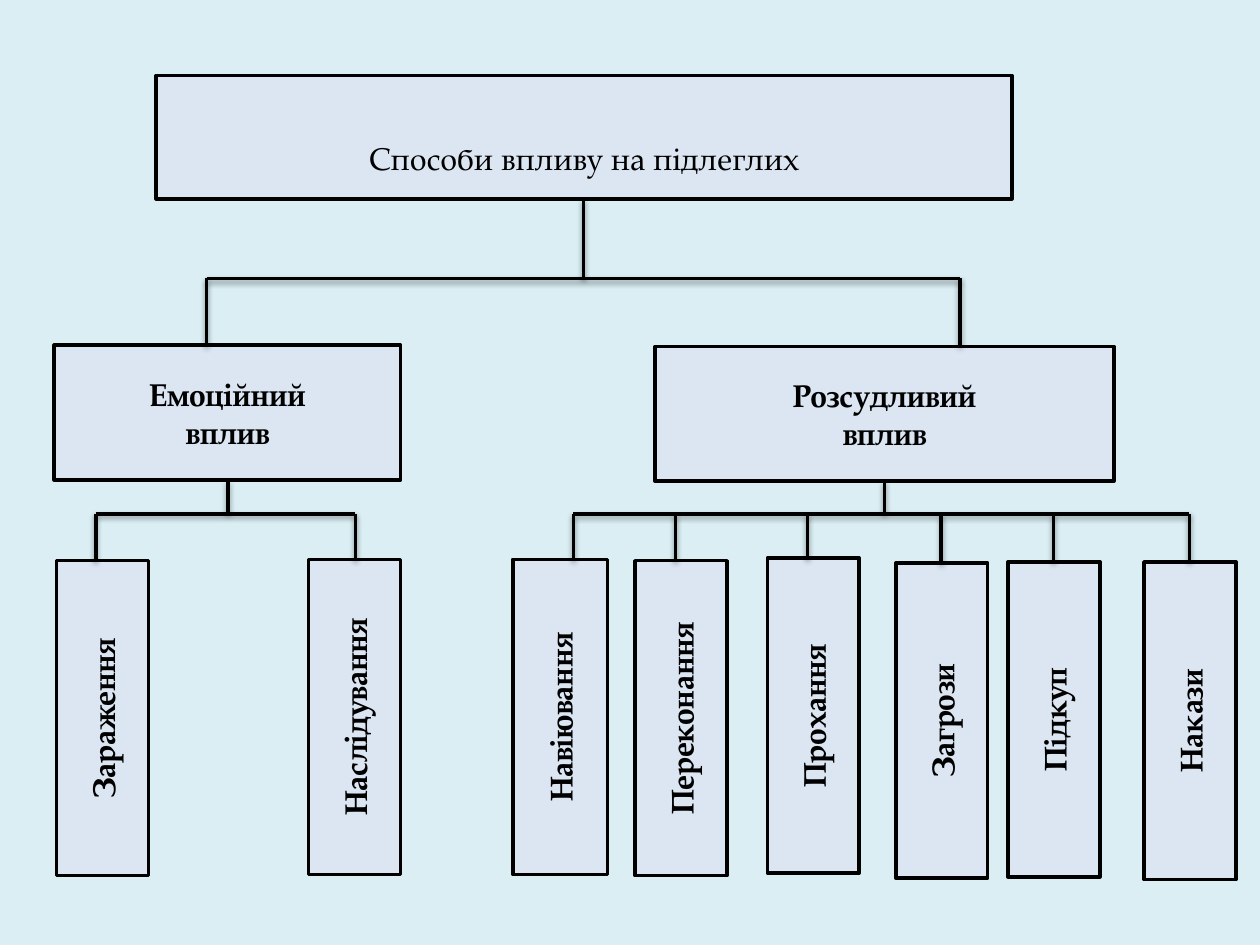
"""Builds a slide with a tree of the ways to influence subordinates."""
from dataclasses import dataclass

from lxml import etree
from pptx import Presentation
from pptx.dml.color import RGBColor
from pptx.enum.shapes import MSO_CONNECTOR, MSO_SHAPE
from pptx.enum.text import MSO_ANCHOR, PP_ALIGN
from pptx.oxml.ns import qn
from pptx.util import Inches, Pt

RECTANGLE = MSO_SHAPE.RECTANGLE
STRAIGHT = MSO_CONNECTOR.STRAIGHT
MIDDLE = MSO_ANCHOR.MIDDLE
CENTER = PP_ALIGN.CENTER
COLUMNS, ROWS = 100, 75


@dataclass(frozen=True)
class Theme:
    """Colours, font and sizes of the slide."""
    backdrop: RGBColor = RGBColor(0xDA, 0xEE, 0xF3)
    panel: RGBColor = RGBColor(0xDC, 0xE6, 0xF2)
    ink: RGBColor = RGBColor(0, 0, 0)
    font: str = "TeX Gyre Pagella"
    text_size: Pt = Pt(18)
    stroke: Pt = Pt(2)
    outline: Pt = Pt(0.75)


def add_solid_fill(parent, color, alpha=None):
    """Add a colour element to an XML parent, with optional opacity."""
    tint = etree.SubElement(parent, qn("a:srgbClr"), val=str(color))
    if alpha is not None:
        etree.SubElement(tint, qn("a:alpha"), val=str(alpha * 1000))


def write_text(shape, text, theme, bold=True, vertical=False, outlined=False, top_inset=None):
    """Write centred lines of text into a shape."""
    frame = shape.text_frame
    frame.word_wrap = True
    frame.vertical_anchor = MIDDLE
    if top_inset is not None:
        frame.margin_top = top_inset
    if vertical:
        shape.element.xpath(".//a:bodyPr")[0].set("vert", "vert270")
    frame.text = text
    for paragraph in frame.paragraphs:
        paragraph.alignment = CENTER
        font = paragraph.runs[0].font
        font.name, font.size, font.bold = theme.font, theme.text_size, bold
        font.color.rgb = theme.ink
    if outlined:
        for properties in shape.element.xpath(".//a:rPr"):
            edge = etree.Element(qn("a:ln"), w=str(theme.outline))
            properties.insert(0, edge)
            add_solid_fill(etree.SubElement(edge, qn("a:solidFill")), theme.ink)


class TreeSlide:
    """Draws boxes and branches on a grid of the slide."""

    def __init__(self, deck, theme):
        """Add a blank slide with the theme's backdrop."""
        self.theme = theme
        self.column = deck.slide_width / COLUMNS
        self.row = deck.slide_height / ROWS
        self.slide = deck.slides.add_slide(deck.slide_layouts[6])
        self.slide.background.fill.solid()
        self.slide.background.fill.fore_color.rgb = theme.backdrop

    def place(self, *cells):
        """Turn alternating columns and rows into lengths."""
        return [round(cell * (self.row if i % 2 else self.column)) for i, cell in enumerate(cells)]

    def box(self, text, left, top, width, height, **text_format):
        """Draw a labelled box."""
        panel = self.slide.shapes.add_shape(RECTANGLE, *self.place(left, top, width, height))
        panel.shadow.inherit = False
        panel.fill.solid()
        panel.fill.fore_color.rgb = self.theme.panel
        panel.line.color.rgb = self.theme.ink
        panel.line.width = self.theme.stroke
        write_text(panel, text, self.theme, **text_format)

    def line(self, start_x, start_y, end_x, end_y):
        """Draw a straight line with a soft shadow."""
        link = self.slide.shapes.add_connector(STRAIGHT, *self.place(start_x, start_y, end_x, end_y))
        link.line.color.rgb = self.theme.ink
        link.line.width = self.theme.stroke
        effects = etree.SubElement(link.element.spPr, qn("a:effectLst"))
        shadow = etree.SubElement(effects, qn("a:outerShdw"), blurRad=str(Pt(3.1)),
                                  dist=str(Pt(1.6)), dir="5400000", rotWithShape="0")
        add_solid_fill(shadow, self.theme.ink, alpha=38)

    def branch(self, stem_x, stem_top, bar_y, drops):
        """Join a parent's stem to the drops above its children."""
        self.line(stem_x, stem_top, stem_x, bar_y)
        self.line(drops[0][0], bar_y, drops[-1][0], bar_y)
        for drop_x, drop_end in drops:
            self.line(drop_x, bar_y, drop_x, drop_end)

    def leaves(self, stem_x, children):
        """Draw upright boxes under a shared branch."""
        for label, left, top, _, width, height in children:
            self.box(label, left, top, width, height, vertical=True)
        self.branch(stem_x, 38.2, 40.8, [(child[3], child[2]) for child in children])


EMOTIONAL = [
    ("Зараження", 4.5, 44.5, 7.6, 7.3, 25),
    ("Наслідування", 24.5, 44.4, 28.2, 7.3, 25),
]
RATIONAL = [
    ("Навіювання", 40.7, 44.4, 45.5, 7.5, 25),
    ("Переконання", 50.4, 44.5, 53.6, 7.3, 25),
    ("Прохання", 60.9, 44.3, 64.1, 7.3, 25),
    ("Загрози", 71.1, 44.7, 74.7, 7.3, 25),
    ("Підкуп", 80, 44.6, 83.6, 7.3, 25),
    ("Накази", 90.8, 44.6, 94.4, 7.3, 25.2),
]


def main():
    """Build and save the deck."""
    deck = Presentation()
    deck.slide_width, deck.slide_height = Inches(10), Inches(7.5)
    tree = TreeSlide(deck, Theme())
    tree.box("Способи впливу на підлеглих", 12.4, 6, 67.9, 9.8,
             bold=False, outlined=True, top_inset=Inches(0.37))
    tree.box("Емоційний\nвплив", 4.3, 27.4, 27.5, 10.7)
    tree.box("Розсудливий\nвплив", 52, 27.5, 36.4, 10.7)
    tree.branch(46.3, 15.8, 22.1, [(16.4, 27.4), (76.2, 27.4)])
    tree.leaves(18.1, EMOTIONAL)
    tree.leaves(70.2, RATIONAL)
    deck.save("out.pptx")


if __name__ == "__main__":
    main()
